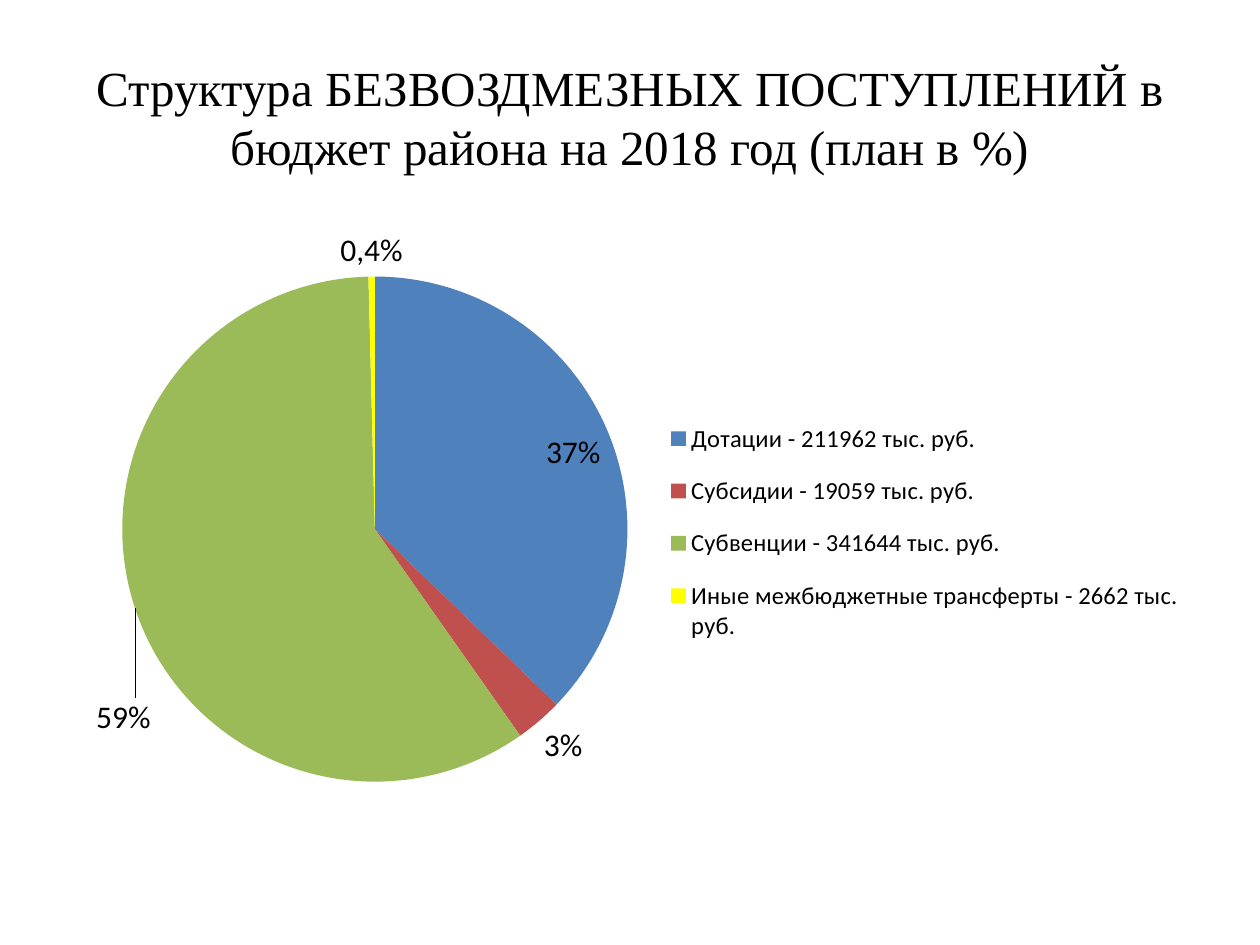
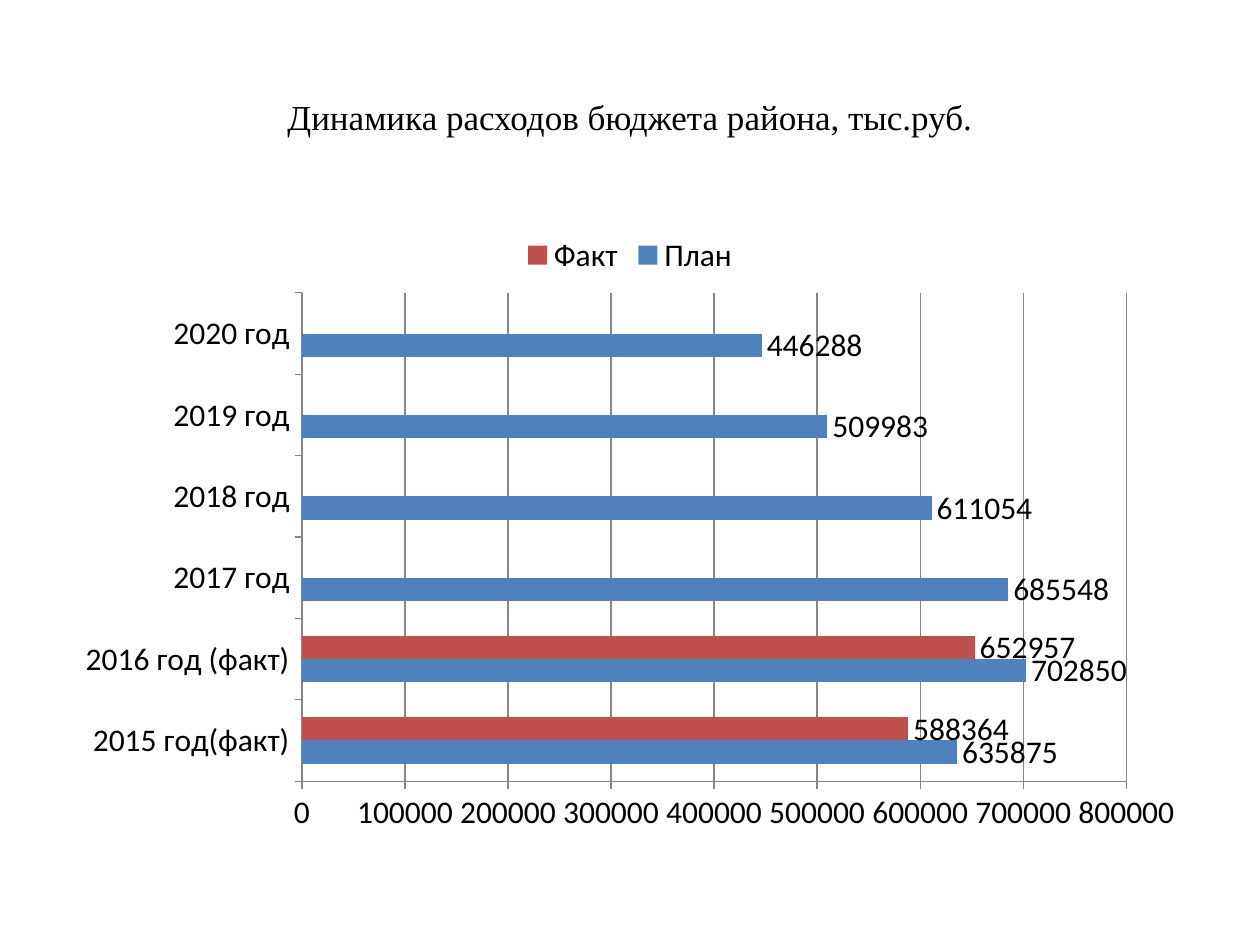
from pptx import Presentation
from pptx.chart.data import CategoryChartData
from pptx.dml.color import RGBColor
from pptx.enum.chart import (XL_CHART_TYPE as Kind, XL_LABEL_POSITION as Place,
                             XL_LEGEND_POSITION as Side, XL_TICK_MARK as Tick)
from pptx.enum.text import MSO_ANCHOR as Anchor, PP_ALIGN as Align
from pptx.oxml import parse_xml
from pptx.oxml.ns import nsdecls
from pptx.util import Inches, Pt

BLUE, RED, GREEN, YELLOW = "4F81BD", "C0504D", "9BBB59", "FFFF00"
BLACK, GRAY = "000000", "868686"


def rgb(code):
    return RGBColor.from_string(code)


def manual_layout(**parts):
    settings = "".join(f'<c:{tag} val="{value}"/>' for tag, value in parts.items())
    return parse_xml(f'<c:layout {nsdecls("c")}><c:manualLayout>{settings}'
                     '</c:manualLayout></c:layout>')


class BudgetDeck:
    """Holds the shared style and the current slide of the budget report."""

    title_font, chart_font = "Times New Roman", "Calibri"
    title_box = (0.05, 0.04, 0.9, 1 / 6)
    chart_box = (0.05, 0.7 / 3, 0.9, 0.66)

    def __init__(self):
        self.deck = Presentation()
        self.deck.slide_width, self.deck.slide_height = Inches(10), Inches(7.5)

    def share(self, left, top, width, height):
        across, down = self.deck.slide_width, self.deck.slide_height
        return (int(left * across), int(top * down),
                int(width * across), int(height * down))

    def style(self, font, size, name):
        font.size, font.name, font.bold = Pt(size), name, False
        font.color.rgb = rgb(BLACK)

    def add_slide(self, heading, size):
        self.slide = self.deck.slides.add_slide(self.deck.slide_layouts[6])
        frame = self.slide.shapes.add_textbox(*self.share(*self.title_box)).text_frame
        frame.word_wrap, frame.vertical_anchor = True, Anchor.MIDDLE
        paragraph = frame.paragraphs[0]
        paragraph.text, paragraph.alignment = heading, Align.CENTER
        self.style(paragraph.font, size, self.title_font)

    def add_chart(self, kind, categories, series, legend_side, legend_size):
        table = CategoryChartData()
        table.categories = categories
        for name, values in series.items():
            table.add_series(name, values)
        chart = self.slide.shapes.add_chart(
            kind, *self.share(*self.chart_box), table).chart
        self.style(chart.font, 18, self.chart_font)
        chart.has_title = False
        chart.has_legend = True
        chart.legend.position = legend_side
        chart.legend.include_in_layout = False
        self.style(chart.legend.font, legend_size, self.chart_font)
        return chart

    def fill(self, part, color):
        part.format.fill.solid()
        part.format.fill.fore_color.rgb = rgb(color)

    def place_pie(self, chart):
        plot_area = chart.plots[0]._element.getparent()
        legend = chart.legend._element
        for part in (plot_area, legend):
            for automatic in part.xpath("./c:layout"):
                part.remove(automatic)
        plot_area.insert(0, manual_layout(layoutTarget="inner", xMode="edge", yMode="edge",
                                          x=0.05, y=0.09, w=0.45, h=0.81))
        legend.xpath("./c:legendPos")[0].addnext(
            manual_layout(xMode="edge", yMode="edge", x=0.53, y=0.29, w=0.46, h=0.42))

    def add_pie(self, shares, colors, places, captions, shifts):
        chart = self.add_chart(Kind.PIE, list(shares), {"Series 1": list(shares.values())},
                               Side.RIGHT, 14)
        self.place_pie(chart)
        series = chart.plots[0].series[0]
        labels = series.data_labels
        labels.show_value, labels.show_percentage = False, True
        self.style(labels.font, 18, self.chart_font)
        for index, (color, place) in enumerate(zip(colors, places)):
            point = series.points[index]
            self.fill(point, color)
            label = point.data_label
            if index in captions:
                paragraph = label.text_frame.paragraphs[0]
                paragraph.text = captions[index]
                self.style(paragraph.font, 18, self.chart_font)
            else:
                self.style(label.font, 18, self.chart_font)
            label.position = place
        for index, label in enumerate(series._element.xpath("./c:dLbls/c:dLbl")):
            label.xpath("./c:showVal")[0].set("val", "0")
            label.xpath("./c:showPercent")[0].set("val", "1")
            if index in shifts:
                across, down = shifts[index]
                label.xpath("./c:idx")[0].addnext(manual_layout(x=across, y=down))

    def add_bars(self, categories, series, colors):
        chart = self.add_chart(Kind.BAR_CLUSTERED, categories, series, Side.TOP, 18)
        plot = chart.plots[0]
        plot.gap_width, plot.overlap, plot.vary_by_categories = 150, 0, False
        for axis in (chart.category_axis, chart.value_axis):
            axis.major_tick_mark, axis.minor_tick_mark = Tick.OUTSIDE, Tick.NONE
            self.draw_line(axis.format.line)
        chart.value_axis.has_major_gridlines = True
        self.draw_line(chart.value_axis.major_gridlines.format.line)
        for bars, color in zip(plot.series, colors):
            self.fill(bars, color)
            bars.invert_if_negative = False
            labels = bars.data_labels
            labels.show_value = True
            self.style(labels.font, 18, self.chart_font)
            empty = [index for index, value in enumerate(bars.values) if value == 0]
            for slot, index in enumerate(empty):
                labels._element.insert(slot, parse_xml(
                    f'<c:dLbl {nsdecls("c")}><c:idx val="{index}"/>'
                    '<c:delete val="1"/></c:dLbl>'))

    def draw_line(self, line):
        line.width, line.color.rgb = Pt(0.75), rgb(GRAY)


def main():
    report = BudgetDeck()
    report.add_slide("Структура БЕЗВОЗДМЕЗНЫХ ПОСТУПЛЕНИЙ в бюджет района "
                     "на 2018 год (план в %)", 28)
    report.add_pie(
        {"Дотации - 211962 тыс. руб.": 37,
         "Субсидии - 19059 тыс. руб.": 3,
         "Субвенции - 341644 тыс. руб.": 59,
         "Иные межбюджетные трансферты - 2662 тыс. руб.": 0.4},
        colors=(BLUE, RED, GREEN, YELLOW),
        places=(Place.INSIDE_END,) + (Place.OUTSIDE_END,) * 3,
        captions={3: "0,4%"},
        shifts={2: (0.02, 0.14)})

    report.add_slide("Динамика расходов бюджета района, тыс.руб.", 20)
    report.add_bars(
        ["2015 год(факт)", "2016 год (факт)"] + [f"{year} год" for year in range(2017, 2021)],
        {"План": (635875, 702850, 685548, 611054, 509983, 446288),
         "Факт": (588364, 652957, 0, 0, 0, None)},
        colors=(BLUE, RED))
    report.deck.save("out.pptx")


if __name__ == "__main__":
    main()
